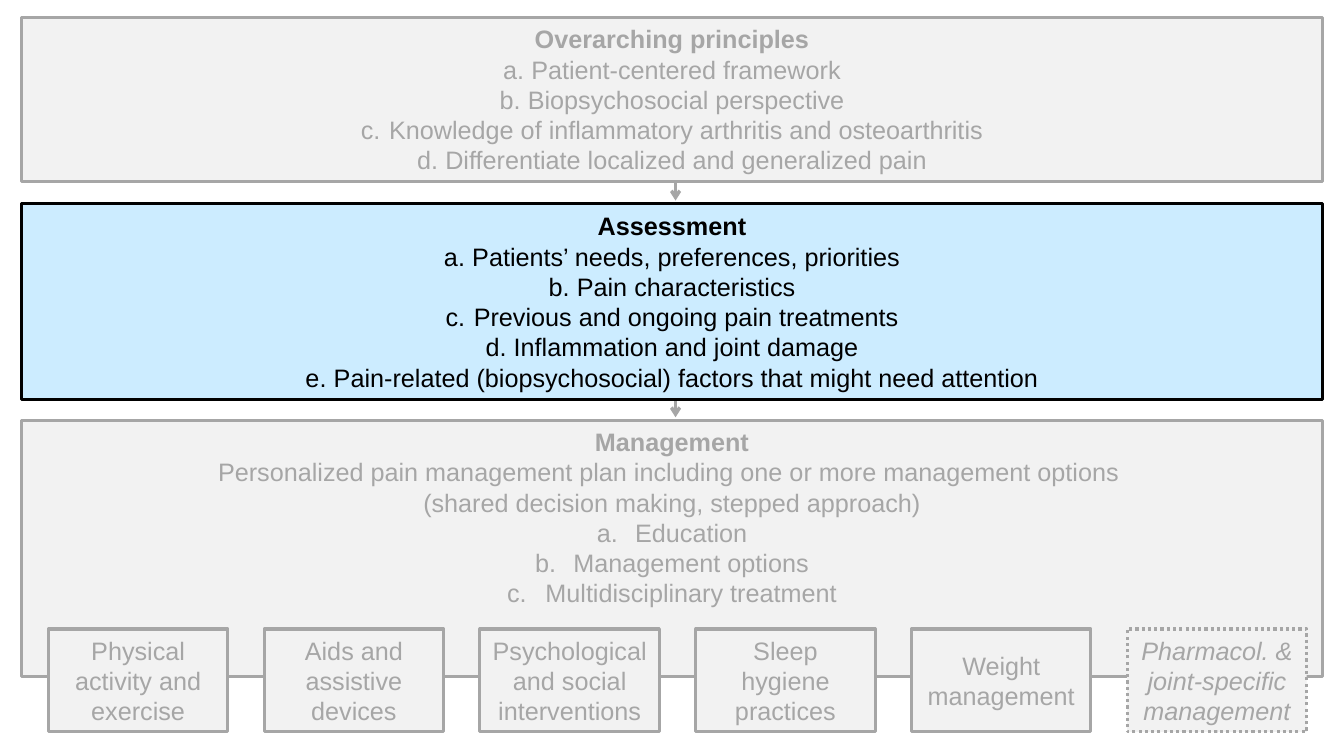
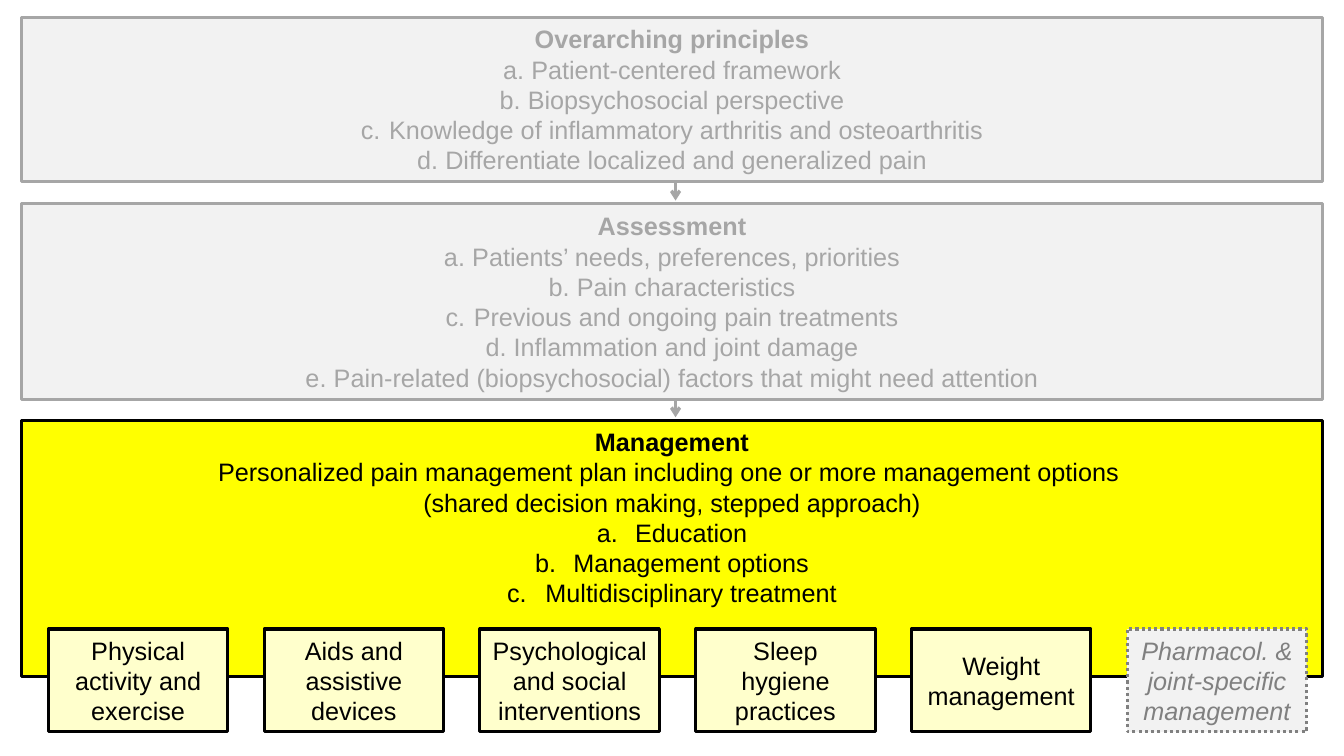
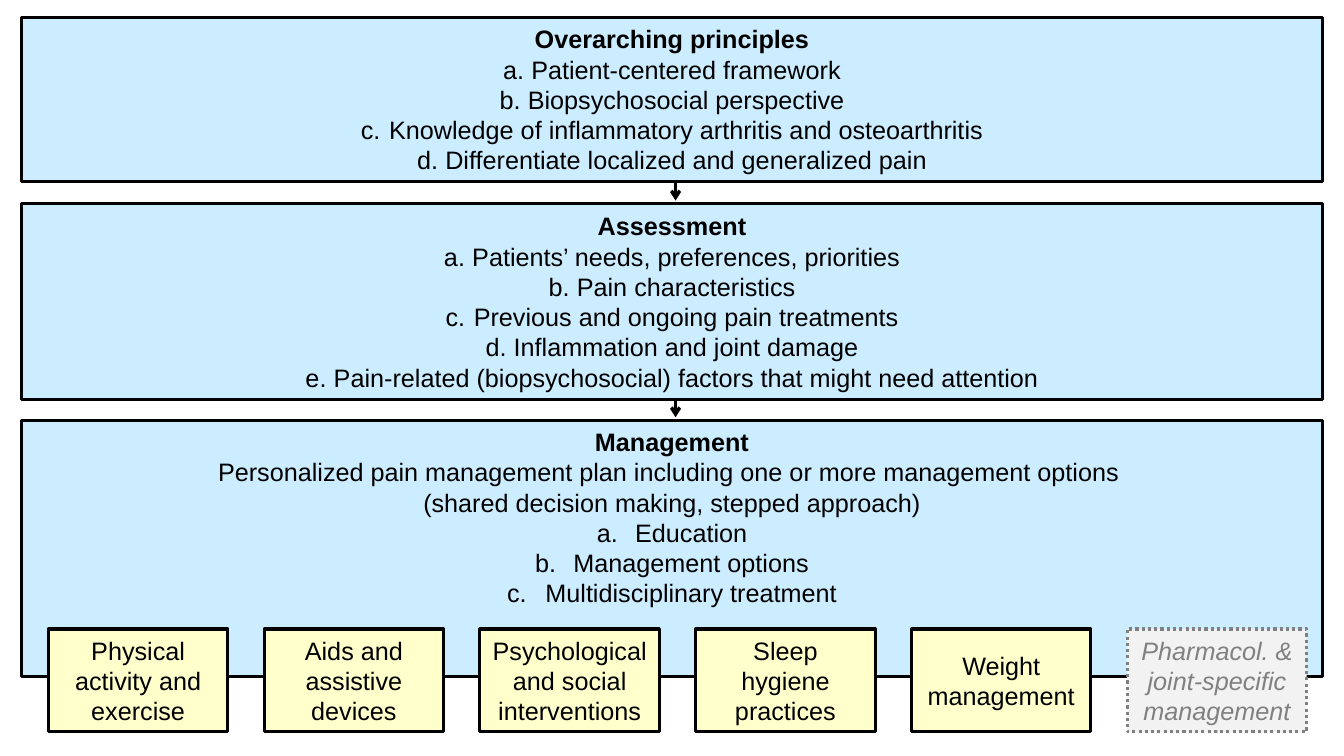
from collections import namedtuple
from dataclasses import dataclass

from lxml import etree
from pptx import Presentation
from pptx.dml.color import RGBColor
from pptx.enum.dml import MSO_LINE
from pptx.enum.shapes import MSO_CONNECTOR, MSO_SHAPE
from pptx.enum.text import MSO_ANCHOR, PP_ALIGN
from pptx.oxml.ns import qn
from pptx.util import Emu, Pt

RECT = MSO_SHAPE.RECTANGLE
LINE = MSO_CONNECTOR.STRAIGHT
TOP, MIDDLE = MSO_ANCHOR.TOP, MSO_ANCHOR.MIDDLE
CENTER = PP_ALIGN.CENTER
DOTS = MSO_LINE.ROUND_DOT

Tone = namedtuple("Tone", "fill ink")
Box = namedtuple("Box", "x y w h")
Band = namedtuple("Band", "y h title lead items hang anchor")


@dataclass(frozen=True)
class Theme:
    font: str = "Arial"
    size: float = 18
    rule: float = 2.25
    ink: str = "000000"
    dim: Tone = Tone("F2F2F2", "A6A6A6")
    note: Tone = Tone("F2F2F2", "808080")
    blue: Tone = Tone("CCECFF", "000000")
    gold: Tone = Tone("FFFF00", "000000")
    cream: Tone = Tone("FFFFCC", "000000")


T = Theme()

BANDS = [
    Band(17, 163, "Overarching principles", [], [
        "Patient-centered framework",
        "Biopsychosocial perspective",
        "Knowledge of inflammatory arthritis and osteoarthritis",
        "Differentiate localized and generalized pain",
    ], 28, MIDDLE),
    Band(202, 194, "Assessment", [], [
        "Patients’ needs, preferences, priorities",
        "Pain characteristics",
        "Previous and ongoing pain treatments",
        "Inflammation and joint damage",
        "Pain-related (biopsychosocial) factors that might need attention",
    ], 28, MIDDLE),
    Band(417, 254, "Management", [
        "Personalized pain management plan including one or more management options ",
        "(shared decision making, stepped approach)",
    ], ["Education", "Management options", "Multidisciplinary treatment"], 38, TOP),
]

OPTIONS = [
    ["Physical activity and exercise"],
    ["Aids and assistive devices"],
    ["Psychological and social interventions"],
    ["Sleep", "hygiene", "practices"],
    ["Weight management"],
]
DRUGS = ["Pharmacol. & joint-specific management"]

# Tones of the three bands, the options and the drug box, then the arrow ink
VIEWS = [
    ([T.dim, T.blue, T.dim], T.dim, T.dim, T.dim.ink),
    ([T.dim, T.dim, T.gold], T.cream, T.note, T.dim.ink),
    ([T.blue, T.blue, T.blue], T.cream, T.note, T.ink),
]


def px(n):
    return Emu(n * 9144)


def rgb(code):
    return RGBColor.from_string(code)


def panel(slide, box, tone, anchor=MIDDLE):
    """Draw a framed rectangle and return it."""
    shape = slide.shapes.add_shape(RECT, *map(px, box))
    shape.shadow.inherit = False
    shape.fill.solid()
    shape.fill.fore_color.rgb = rgb(tone.fill)
    shape.line.color.rgb = rgb(tone.ink)
    shape.line.width = Pt(T.rule)
    frame = shape.text_frame
    frame.word_wrap = True
    frame.vertical_anchor = anchor
    frame.margin_left = frame.margin_right = px(9)
    frame.margin_top = frame.margin_bottom = px(6)
    return shape


def write(frame, lines, ink):
    """Fill a frame with (text, bold, italic, hang) lines."""
    for i, (text, bold, slant, hang) in enumerate(lines):
        para = frame.add_paragraph() if i else frame.paragraphs[0]
        para.alignment = CENTER
        if hang:
            props = para._p.get_or_add_pPr()
            props.set("marL", str(px(hang)))
            props.set("indent", str(-px(hang)))
            face = etree.SubElement(props, qn("a:buFont"))
            face.set("typeface", T.font)
            mark = etree.SubElement(props, qn("a:buAutoNum"))
            mark.set("type", "alphaLcPeriod")
        run = para.add_run()
        run.text = text
        font = run.font
        font.name, font.size = T.font, Pt(T.size)
        font.bold, font.italic = bold, slant
        font.color.rgb = rgb(ink)


def arrow(slide, x, tip, ink):
    """Draw a short arrow down to the tip."""
    link = slide.shapes.add_connector(LINE, px(x), px(tip - 40), px(x), px(tip))
    link.line.color.rgb = rgb(ink)
    link.line.width = Pt(T.rule)
    props = link._element.spPr
    head = etree.SubElement(props.find(qn("a:ln")), qn("a:tailEnd"))
    head.set("type", "arrow")
    etree.SubElement(props, qn("a:effectLst"))


def stage(slide, box, band, tone):
    """Place one wide band with its title, lead and lettered list."""
    shape = panel(slide, box, tone, band.anchor)
    lines = [(band.title, True, False, 0)]
    lines += [(text, False, False, 0) for text in band.lead]
    lines += [(text, False, False, band.hang) for text in band.items]
    write(shape.text_frame, lines, tone.ink)


def choices(slide, box, tone, drug):
    """Place the row of options; the last one is dotted and italic."""
    wide = 178
    step = (box.w - wide) // len(OPTIONS)
    for i, texts in enumerate(OPTIONS + [DRUGS]):
        last = texts is DRUGS
        look = drug if last else tone
        shape = panel(slide, Box(box.x + i * step, box.y, wide, box.h), look)
        if last:
            shape.line.dash_style = DOTS
        write(shape.text_frame, [(t, False, last, 0) for t in texts], look.ink)


def chart(slide, tones, option, drug, ink):
    """Build the whole flow on one slide."""
    # Arrows start behind the bands
    for band in BANDS[1:]:
        arrow(slide, 670, band.y - 3, ink)
    for band, tone in zip(BANDS, tones):
        stage(slide, Box(21, band.y, 1291, band.h), band, tone)
    choices(slide, Box(48, 624, 1249, 102), option, drug)


def main():
    deck = Presentation()
    deck.slide_width, deck.slide_height = px(1333), px(750)
    blank = deck.slide_layouts[6]
    for view in VIEWS:
        chart(deck.slides.add_slide(blank), *view)
    deck.save("out.pptx")


if __name__ == "__main__":
    main()
